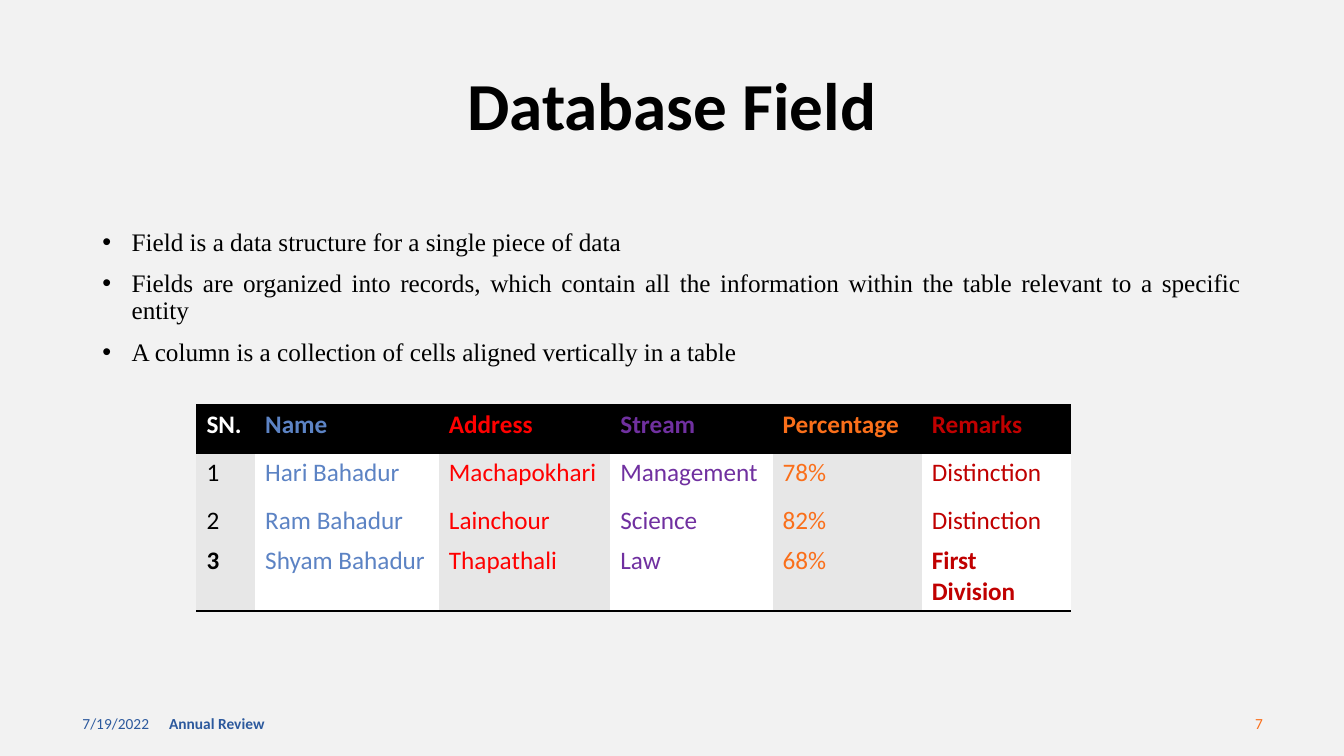
from lxml import etree
from pptx import Presentation
from pptx.dml.color import RGBColor
from pptx.enum.text import MSO_ANCHOR, MSO_AUTO_SIZE, PP_ALIGN
from pptx.oxml import parse_xml
from pptx.oxml.ns import nsdecls, qn
from pptx.util import Cm, Pt

LEFT, CENTER, RIGHT, JUSTIFY = (
    PP_ALIGN.LEFT, PP_ALIGN.CENTER, PP_ALIGN.RIGHT, PP_ALIGN.JUSTIFY)
TOP, MIDDLE = MSO_ANCHOR.TOP, MSO_ANCHOR.MIDDLE
FIXED = MSO_AUTO_SIZE.NONE

BLACK = RGBColor(0x00, 0x00, 0x00)
WHITE = RGBColor(0xFF, 0xFF, 0xFF)
PALE = RGBColor(0xF2, 0xF2, 0xF2)
GREY = RGBColor(0xE7, 0xE7, 0xE7)
NAVY = RGBColor(0x2C, 0x59, 0x9D)
BLUE = RGBColor(0x5C, 0x83, 0xC4)
RED = RGBColor(0xFF, 0x00, 0x00)
PURPLE = RGBColor(0x70, 0x30, 0xA0)
ORANGE = RGBColor(0xFA, 0x6F, 0x1A)
CRIMSON = RGBColor(0xC0, 0x00, 0x00)
PLAIN_STYLE = "{2D5ABB26-0587-4C30-8999-92F81FD0307C}"


def write(frame, *lines, size=18, color=BLACK, bold=False, font="Calibri",
          align=LEFT, anchor=TOP, spacing=None, before=None):
    """Fill a text frame with one paragraph for each line."""
    frame.word_wrap = True
    frame.vertical_anchor = anchor
    for i, line in enumerate(lines):
        para = frame.add_paragraph() if i else frame.paragraphs[0]
        para.alignment = align
        para.line_spacing = spacing
        para.space_before = before
        run = para.add_run()
        run.text = line
        run.font.size = Pt(size)
        run.font.name = font
        run.font.bold = bold
        run.font.color.rgb = color


def rule(cell, side):
    """Draw a black border on one side of a cell: lnT or lnB."""
    cell._tc.get_or_add_tcPr().insert(0, parse_xml(
        f'<a:{side} {nsdecls("a")} w="25400"><a:solidFill>'
        f'<a:srgbClr val="{BLACK}"/></a:solidFill></a:{side}>'))


deck = Presentation()
deck.slide_width, deck.slide_height = Cm(33.87), Cm(19.05)
slide = deck.slides.add_slide(deck.slide_layouts[5])
slide.background.fill.solid()
slide.background.fill.fore_color.rgb = PALE

# Title
title = slide.shapes.title
title.left, title.top, title.width, title.height = (
    Cm(2.33), Cm(1.75), Cm(29.21), Cm(1.96))
write(title.text_frame, "Database Field", size=48, bold=True,
      align=CENTER, anchor=MIDDLE, spacing=0.9)
title.text_frame.auto_size = FIXED

# Bullets
body = slide.shapes.add_textbox(Cm(2.33), Cm(5.66), Cm(29.21), Cm(11.43))
write(body.text_frame,
      "Field is a data structure for a single piece of data",
      "Fields are organized into records, which contain all the information "
      "within the table relevant to a specific entity",
      "A column is a collection of cells aligned vertically in a table",
      font="Times New Roman", align=JUSTIFY, spacing=0.9, before=Pt(10))
for para in body.text_frame.paragraphs:
    props = para._p.get_or_add_pPr()
    props.set("marL", str(Cm(0.74)))
    props.set("indent", str(Cm(-0.74)))
    etree.SubElement(props, qn("a:buFont")).set("typeface", "Arial")
    etree.SubElement(props, qn("a:buChar")).set("char", "•")

# Table
ROWS = [
    ["SN.", "Name", "Address", "Stream", "Percentage", "Remarks"],
    ["1", "Hari Bahadur", "Machapokhari", "Management", "78%", "Distinction"],
    ["2", "Ram Bahadur", "Lainchour", "Science", "82%", "Distinction"],
    ["3", "Shyam Bahadur", "Thapathali", "Law", "68%", "First Division"],
]
COLORS = [BLACK, BLUE, RED, PURPLE, ORANGE, CRIMSON]
WIDTHS = [1.48, 4.63, 4.32, 4.09, 3.76, 3.76]
HEIGHTS = [1.2, 1.2, 0.92, 1.48]
last = len(ROWS) - 1

grid = slide.shapes.add_table(len(ROWS), len(WIDTHS), Cm(4.95), Cm(10.2),
                              Cm(sum(WIDTHS)), Cm(sum(HEIGHTS))).table
grid._tbl.tblPr.find(qn("a:tableStyleId")).text = PLAIN_STYLE
for col, width in zip(grid.columns, WIDTHS):
    col.width = Cm(width)
for r, words in enumerate(ROWS):
    grid.rows[r].height = Cm(HEIGHTS[r])
    for c, word in enumerate(words):
        cell = grid.cell(r, c)
        head = r == 0
        edge = c in (0, len(words) - 1)
        write(cell.text_frame, word, bold=head or (r == last and edge),
              color=WHITE if head and c == 0 else COLORS[c])
        cell.fill.solid()
        cell.fill.fore_color.rgb = BLACK if head else (GREY, WHITE)[c % 2]
        if head or r == last:
            rule(cell, "lnB")
        if head:
            rule(cell, "lnT")

# Footer
for text, left, width, color, bold, align in [
    ("7/19/2022", 1.83, 7.62, NAVY, False, LEFT),
    ("Annual Review", 4.01, 11.43, NAVY, True, LEFT),
    ("7", 24.46, 7.62, ORANGE, False, RIGHT),
]:
    box = slide.shapes.add_textbox(Cm(left), Cm(17.73), Cm(width), Cm(1.02))
    write(box.text_frame, text, size=11, color=color, bold=bold,
          align=align, anchor=MIDDLE)

deck.save("out.pptx")
